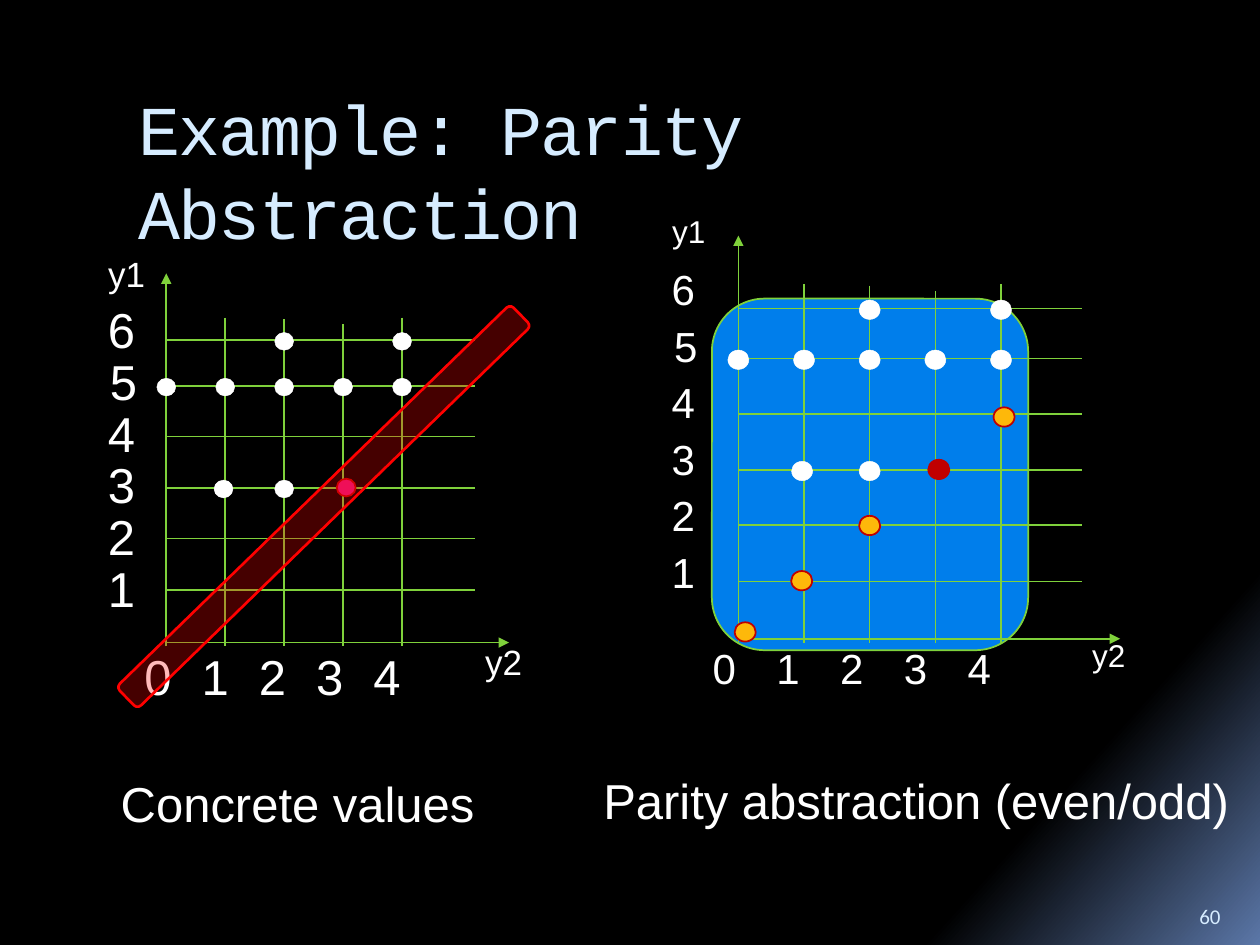
import lxml.etree
import pptx
import pptx.dml.color
import pptx.enum.shapes
import pptx.enum.text
import pptx.oxml.ns
import pptx.util

Inches = pptx.util.Inches
Pt = pptx.util.Pt
RGBColor = pptx.dml.color.RGBColor
Shape = pptx.enum.shapes.MSO_SHAPE
Anchor = pptx.enum.text.MSO_ANCHOR

BLACK = RGBColor(0x00, 0x00, 0x00)
WHITE = RGBColor(0xFF, 0xFF, 0xFF)
GLOW = RGBColor(0x5B, 0x77, 0xA8)
PALE = RGBColor(0xD6, 0xEC, 0xFF)
GREEN = RGBColor(0x7F, 0xD1, 0x3B)
BLUE = RGBColor(0x00, 0x7E, 0xEB)
RED = RGBColor(0xFF, 0x00, 0x00)
DARK_RED = RGBColor(0xC0, 0x00, 0x00)
PINK = RGBColor(0xEA, 0x15, 0x7A)
ORANGE = RGBColor(0xFE, 0xB8, 0x0A)

COLUMN_STEP = 17.2
ROW_HEIGHTS = (0, 14.2, 28.2, 41.9, 55.8, 69.5, 81.9)
COLUMN_TOPS = (12, 12.4, 13.7, 12)
GRID_RIGHT = 90

WHITE_DOTS = [(column, 5, 0, 0) for column in range(5)]
WHITE_DOTS += [(2, 6, 0, 0), (4, 6, 0, 0), (2, 3, 0, 0), (1, 3, -0.5, 0)]
MEETING_DOT = (3, 3, 0.9, -0.4)
ORANGE_DOTS = [(0, 0, 1.8, -2), (2, 2, 0, -0.2), (1, 1, -0.6, -0.5), (4, 4, 0.8, 0.5)]


def add_ooxml(parent, tag, **attributes):
    return lxml.etree.SubElement(parent, pptx.oxml.ns.qn(tag), **attributes)


def add_text(page, box, text, size, font="Arial", color=WHITE, wrap=False,
             frame_format=None, para_format=None, spacing=None):
    frame = page.shapes.add_textbox(*map(Inches, box)).text_frame
    for name, value in {"word_wrap": wrap, **(frame_format or {})}.items():
        setattr(frame, name, value)
    para = frame.paragraphs[0]
    for name, value in (para_format or {}).items():
        setattr(para, name, value)
    span = para.add_run()
    span.text = text
    for name, value in {"name": font, "size": Pt(size)}.items():
        setattr(span.font, name, value)
    span.font.color.rgb = color
    if spacing is not None:
        span.font._element.set("spc", str(spacing))


def add_figure(page, kind, box, fill, line, width):
    figure = page.shapes.add_shape(kind, *map(Inches, box))
    figure.shadow.inherit = False
    figure.fill.solid()
    figure.fill.fore_color.rgb = fill
    figure.line.color.rgb = line
    figure.line.width = Pt(width)
    return figure


def add_line(page, start, end, arrow=False):
    line = page.shapes.add_connector(
        pptx.enum.shapes.MSO_CONNECTOR.STRAIGHT, *map(Inches, start + end))
    line.line.color.rgb = GREEN
    line.line.width = Pt(0.94)
    if arrow:
        add_ooxml(line.line._get_or_add_ln(), "a:tailEnd", type="triangle")
    add_ooxml(line._element.spPr, "a:effectLst")


def place(box, x, y):
    left, top, width, height = box
    return left + width * x / 100, top + height * y / 100


def draw_grid(page, box):
    add_line(page, place(box, 0, 101), place(box, 0, 0), arrow=True)
    add_line(page, place(box, 0, 100), place(box, 100, 100), arrow=True)
    for column, top in enumerate(COLUMN_TOPS, 1):
        x = column * COLUMN_STEP
        add_line(page, place(box, x, top), place(box, x, 101))
    for height in ROW_HEIGHTS[1:]:
        add_line(page, place(box, 0, 100 - height), place(box, GRID_RIGHT, 100 - height))


def draw_labels(page, box, number_size, name_size):
    number_box = (number_size * 0.0075 + 0.21, number_size * 0.0175 + 0.08)
    name_box = (name_size * 0.015 + 0.2, name_size * 0.02 + 0.04)
    for column in range(5):
        add_text(page, place(box, -10 + 16.7 * column, 99.4) + number_box,
                 str(column), number_size)
    for row in range(1, 7):
        x = -20.1 if row == 5 else -20.7
        add_text(page, place(box, x, 89.5 - 14 * row) + number_box, str(row), number_size)
    add_text(page, place(box, 89.4, 97.7) + name_box, "y2", name_size)
    add_text(page, place(box, -20.6, -7.4) + name_box, "y1", name_size)


def draw_dots(page, box, dots, fill, line, line_width):
    width, height = box[2] * 0.055, box[3] * 0.048
    for column, row, shift_x, shift_y in dots:
        x, y = place(box, column * COLUMN_STEP + shift_x,
                     100.3 - ROW_HEIGHTS[row] + shift_y)
        add_figure(page, Shape.OVAL, (x - width / 2, y - height / 2, width, height),
                   fill, line, line_width)


def draw_concrete_plot(page, box):
    left, top = box[:2]
    draw_grid(page, box)
    draw_labels(page, box, 28, 20)
    draw_dots(page, box, WHITE_DOTS, WHITE, WHITE, 0.25)
    draw_dots(page, box, [MEETING_DOT], PINK, DARK_RED, 1)
    band = add_figure(page, Shape.ROUNDED_RECTANGLE,
                      (left - 0.93, top + 1.73, 4.36, 0.24), RED, RED, 1.5)
    band.rotation = 315.8
    color = band.fill._xPr.find(pptx.oxml.ns.qn("a:solidFill"))[0]
    add_ooxml(color, "a:alpha", val="27000")
    add_text(page, (left - 0.46, top + 3.92, 3.05, 0.57), "Concrete values", 28)


def draw_parity_plot(page, box):
    left, top = box[:2]
    add_figure(page, Shape.ROUNDED_RECTANGLE,
               (left - 0.21, top + 0.5, 2.51, 2.79), BLUE, GREEN, 1)
    draw_grid(page, box)
    draw_labels(page, box, 24, 18)
    draw_dots(page, box, WHITE_DOTS, WHITE, WHITE, 0.25)
    draw_dots(page, box, [MEETING_DOT], DARK_RED, DARK_RED, 1)
    draw_dots(page, box, ORANGE_DOTS, ORANGE, DARK_RED, 1)
    add_text(page, (left - 1.17, top + 4.2, 5.23, 0.57), "Parity abstraction (even/odd)", 28)


def draw_background(page):
    fill = page.background.fill
    fill.gradient()
    fill.gradient_angle = 318
    for stop, (position, color) in zip(fill.gradient_stops, ((0.84, BLACK), (1, GLOW))):
        stop.position = position
        stop.color.rgb = color


def draw_title(page, box):
    add_text(page, box, "Example: Parity Abstraction", 40, "Courier New", PALE, True,
             {"margin_top": Inches(0.12)}, {"line_spacing": Pt(48)}, -100)


def draw_page_number(page, box):
    add_text(page, box, "60", 12, "Calibri", PALE, True, {"vertical_anchor": Anchor.BOTTOM})


def main():
    deck = pptx.Presentation()
    deck.slide_width, deck.slide_height = Inches(10), Inches(7.5)
    page = deck.slides.add_slide(deck.slide_layouts[6])
    draw_background(page)
    draw_title(page, (1, 0.56, 8.5, 1))
    draw_concrete_plot(page, (1.32, 2.17, 2.72, 2.93))
    draw_parity_plot(page, (5.86, 1.87, 3.03, 3.2))
    draw_page_number(page, (9.42, 7.02, 0.5, 0.4))
    deck.save("out.pptx")


if __name__ == "__main__":
    main()
